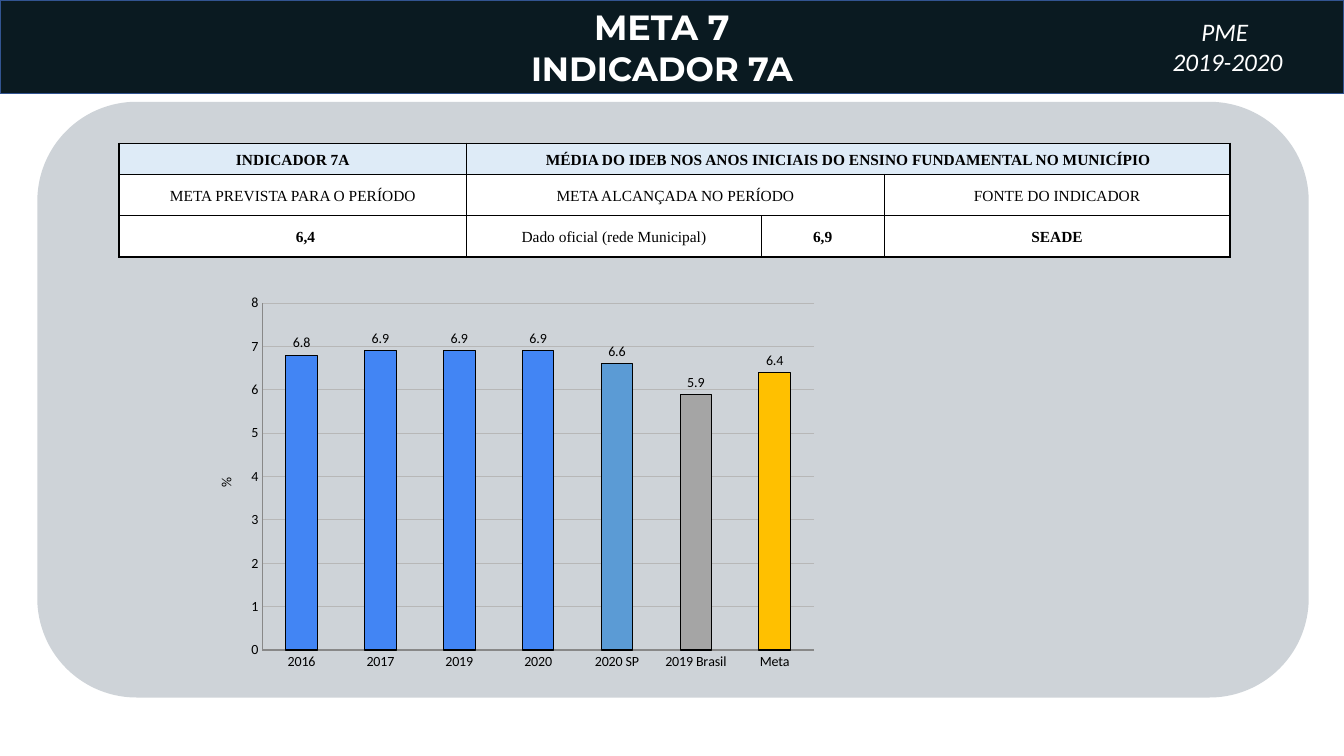
from lxml import etree
from pptx import Presentation
from pptx.chart.data import CategoryChartData
from pptx.dml.color import RGBColor
from pptx.enum import chart as ch, shapes, text
from pptx.oxml import parse_xml
from pptx.oxml.ns import nsdecls, qn
from pptx.util import Inches, Pt


def rgb(code):
    return RGBColor.from_string(code)


def style(font, face, size, color, bold=False, italic=False):
    font.name, font.size, font.bold, font.italic = face, Pt(size), bold, italic
    font.color.rgb = rgb(color)


prs = Presentation()
prs.slide_width, prs.slide_height = Inches(13.33), Inches(7.5)
slide = prs.slides.add_slide(prs.slide_layouts[6])

# Header band
band = slide.shapes.add_shape(
    shapes.MSO_SHAPE.RECTANGLE, 0, 0, Inches(13.33), Inches(0.93))
band.shadow.inherit = False
band.fill.solid()
band.fill.fore_color.rgb = rgb("0A1A21")
band.line.color.rgb = rgb("325491")
band.line.width = Pt(1)
frame = band.text_frame
frame.vertical_anchor = text.MSO_ANCHOR.MIDDLE
frame.text = "META 7\nINDICADOR 7A"
for par, size in zip(frame.paragraphs, (25, 24)):
    par.alignment = text.PP_ALIGN.CENTER
    style(par.font, "Montserrat", size, "FFFFFF", bold=True)
frame.paragraphs[0]._p.get_or_add_pPr().set("marR", str(Inches(0.2)))

# Grey panel
panel = slide.shapes.add_shape(
    shapes.MSO_SHAPE.ROUNDED_RECTANGLE,
    Inches(0.37), Inches(1.01), Inches(12.61), Inches(5.91))
panel.shadow.inherit = False
panel.fill.solid()
panel.fill.fore_color.rgb = rgb("CED3D8")
panel.line.fill.background()

# Indicator table: row, column, last column, wording, bold
cells = [
    (0, 0, 0, "INDICADOR 7A", True),
    (0, 1, 3, "MÉDIA DO IDEB NOS ANOS INICIAIS DO ENSINO FUNDAMENTAL "
              "NO MUNICÍPIO", True),
    (1, 0, 0, "META PREVISTA PARA O PERÍODO", False),
    (1, 1, 2, "META ALCANÇADA NO PERÍODO", False),
    (1, 3, 3, "FONTE DO INDICADOR", False),
    (2, 0, 0, "6,4", True),
    (2, 1, 1, "Dado oficial (rede Municipal)", False),
    (2, 2, 2, "6,9", True),
    (2, 3, 3, "SEADE", True),
]
table = slide.shapes.add_table(
    3, 4, Inches(1.18), Inches(1.42), Inches(11.02), Inches(1.13)).table
for col, width in zip(table.columns, (3.45, 2.92, 1.22, 3.43)):
    col.width = Inches(width)
for row, height in zip(table.rows, (0.31, 0.41, 0.41)):
    row.height = Inches(height)
for row, col, last, words, bold in cells:
    cell = table.cell(row, col)
    if last > col:
        cell.merge(table.cell(row, last))
    cell.text = words
    par = cell.text_frame.paragraphs[0]
    par.alignment = text.PP_ALIGN.CENTER
    par.line_spacing, par.space_after = 1.07, Pt(8)
    style(par.font, "Times New Roman", 11, "000000", bold)
    if words == "6,4":
        par._p.get_or_add_pPr().set("marL", str(Inches(0.25)))

# Cell fills, margins and borders
for row in range(3):
    for col in range(4):
        cell = table.cell(row, col)
        cell.vertical_anchor = text.MSO_ANCHOR.MIDDLE
        cell.margin_left = cell.margin_right = Inches(0.05)
        cell.margin_top, cell.margin_bottom = Inches(0.01), 0
        props = cell._tc.get_or_add_tcPr()
        for side in ("lnL", "lnR", "lnT", "lnB"):
            edge = etree.SubElement(props, qn("a:" + side), w=str(Pt(1)))
            paint = etree.SubElement(edge, qn("a:solidFill"))
            etree.SubElement(paint, qn("a:srgbClr"), val="000000")
        cell.fill.solid()
        cell.fill.fore_color.rgb = rgb("FFFFFF" if row else "DEEBF7")

# Column chart
data = CategoryChartData()
data.categories = ["2016", "2017", "2019", "2020", "2020 SP", "2019 Brasil",
                   "Meta"]
data.add_series("Series 1", (6.8, 6.9, 6.9, 6.9, 6.6, 5.9, 6.4))
chart = slide.shapes.add_chart(
    ch.XL_CHART_TYPE.COLUMN_CLUSTERED, Inches(1.95), Inches(2.86),
    Inches(6.25), Inches(3.86), data).chart
chart.has_legend = chart.has_title = False
style(chart.font, "Calibri", 10, "000000")
area = chart._chartSpace.chart.plotArea
for old in area.findall(qn("c:layout")):
    area.remove(old)
area.insert(0, parse_xml(
    f'<c:layout {nsdecls("c")}><c:manualLayout>'
    '<c:layoutTarget val="inner"/><c:xMode val="edge"/><c:yMode val="edge"/>'
    '<c:x val="0.104"/><c:y val="0.038"/><c:w val="0.876"/><c:h val="0.892"/>'
    '</c:manualLayout></c:layout>'))

# Axes
for axis in (chart.category_axis, chart.value_axis):
    axis.major_tick_mark = axis.minor_tick_mark = ch.XL_TICK_MARK.NONE
    axis.format.line.color.rgb = rgb("888888")
    style(axis.tick_labels.font, "Calibri", 10, "000000")
axis.minimum_scale, axis.maximum_scale, axis.major_unit = 0, 8, 1
grid = axis.major_gridlines.format.line
grid.color.rgb, grid.width = rgb("B7B7B7"), Pt(0.75)
title = axis.axis_title.text_frame
title.text = "%"
style(title.paragraphs[0].font, "Calibri", 10, "000000")

# Bars
plot = chart.plots[0]
plot.gap_width, plot.vary_by_categories = 150, False
plot.has_data_labels = True
plot.data_labels.show_value = True
plot.data_labels.position = ch.XL_LABEL_POSITION.OUTSIDE_END
style(plot.data_labels.font, "Calibri", 10, "000000")
bars = plot.series[0]
tones = ["4285F4"] * 4 + ["5B9BD5", "A5A5A5", "FFC000"]
for spot, tone in enumerate(tones):
    form = bars.points[spot].format
    form.fill.solid()
    form.fill.fore_color.rgb = rgb(tone)
    form.line.color.rgb, form.line.width = rgb("000000"), Pt(0.75)

# Period label
box = slide.shapes.add_textbox(
    Inches(10.87), Inches(0.11), Inches(2.61), Inches(0.71))
frame = box.text_frame
frame.word_wrap = True
frame.text = "PME \n2019-2020"
for par in frame.paragraphs:
    par.alignment = text.PP_ALIGN.CENTER
    style(par.font, "Calibri", 18, "FFFFFF", italic=True)

prs.save("out.pptx")
